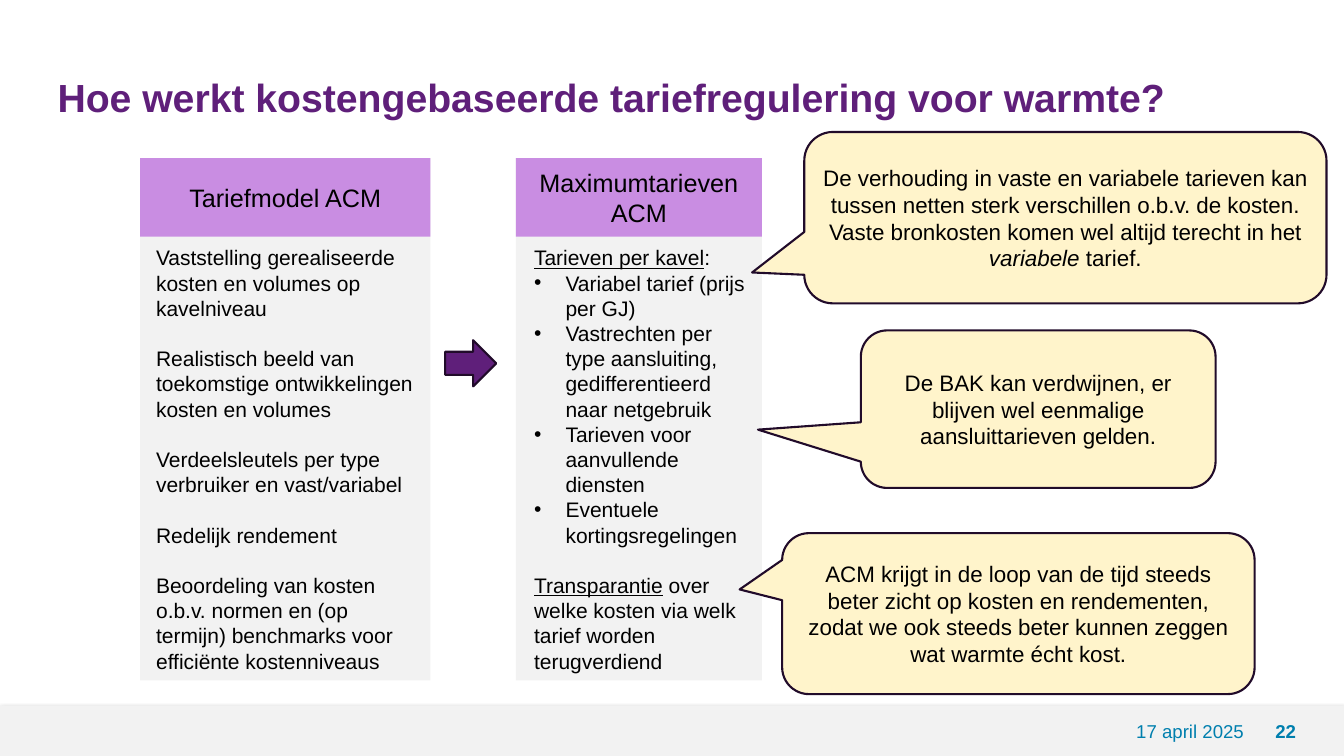
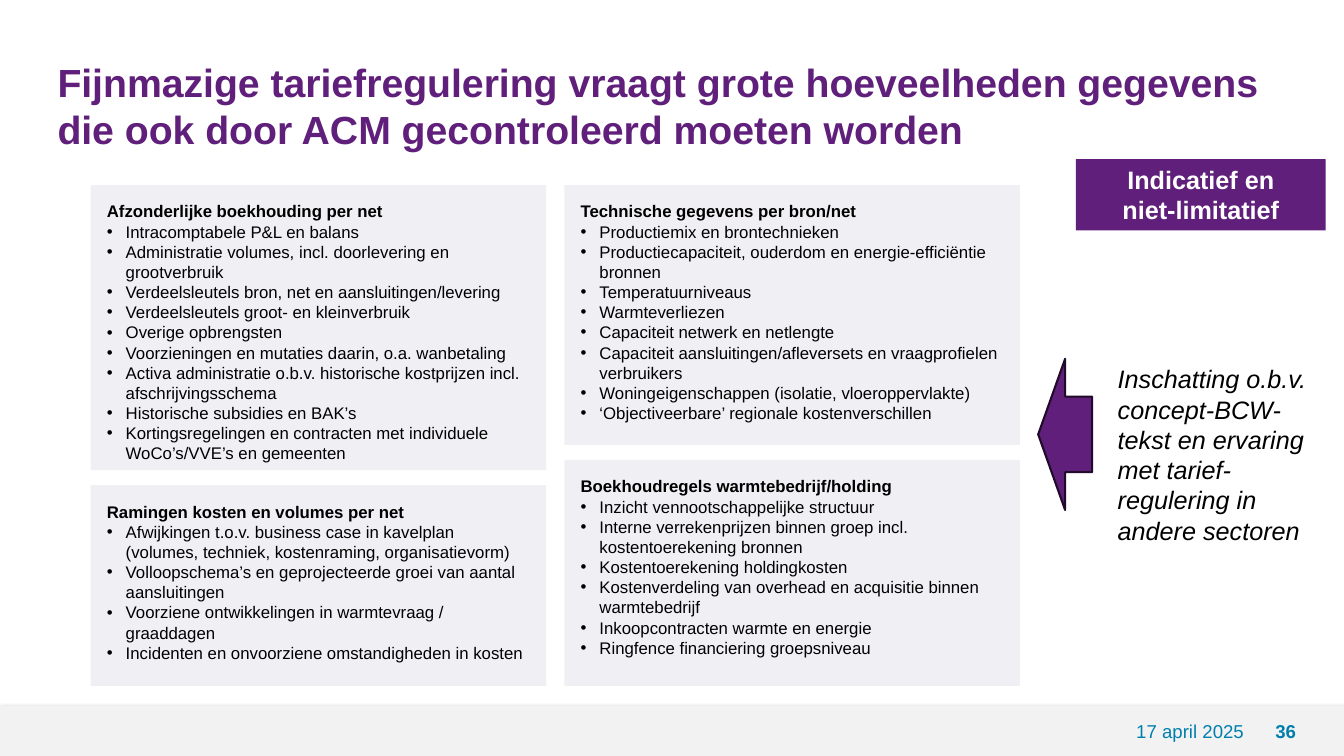
"""Build two slides on cost-based tariff regulation for heat."""
import dataclasses

import pptx
import pptx.dml.color
import pptx.enum.shapes
import pptx.enum.text
import pptx.oxml
import pptx.oxml.ns
import pptx.util

Pt = pptx.util.Pt
SHAPE = pptx.enum.shapes.MSO_SHAPE
ALIGN = pptx.enum.text.PP_ALIGN
ANCHOR = pptx.enum.text.MSO_ANCHOR


@dataclasses.dataclass(frozen=True)
class Theme:
    font: str = "Arial"
    purple: str = "5F1F7A"
    lilac: str = "C98DE2"
    cream: str = "FFF4CB"
    outline: str = "210B2A"
    grey: str = "F2F2F2"
    card: str = "F0EFF4"
    blue: str = "007FAE"
    black: str = "000000"
    white: str = "FFFFFF"
    title: float = 28
    head: float = 18
    callout: float = 16
    body: float = 15
    footer: float = 13.3
    small: float = 12
    line: float = 1.5


T = Theme()
WIDTH, HEIGHT = 960, 540
BAND_TOP = 504
DATE = "17 april 2025"
BULLET = "• "

TARIFF = {
    "title": "Hoe werkt kostengebaseerde tariefregulering voor warmte?",
    "title_top": 28,
    "number": "22",
}
TARIFF_COLUMNS = [
    {
        "head": "Tariefmodel ACM",
        "left": 100, "width": 207.4, "text_left": 104.4, "text_width": 203,
        "body": [
            "Vaststelling gerealiseerde kosten en volumes op kavelniveau",
            "Realistisch beeld van toekomstige ontwikkelingen kosten en volumes",
            "Verdeelsleutels per type verbruiker en vast/variabel",
            "Redelijk rendement",
            "Beoordeling van kosten o.b.v. normen en (op termijn) benchmarks voor "
            "efficiënte kostenniveaus",
        ],
    },
    {
        "head": "Maximumtarieven ACM",
        "left": 368.5, "width": 175.7, "text_left": 374.4, "text_width": 165.6,
        "body": [
            [("Tarieven per kavel", "underline"), (":", None)],
            "• Variabel tarief (prijs per GJ)",
            "• Vastrechten per type aansluiting, gedifferentieerd naar netgebruik",
            "• Tarieven voor aanvullende diensten",
            "• Eventuele kortingsregelingen",
            [("Transparantie", "underline"),
             (" over welke kosten via welk tarief worden terugverdiend", None)],
        ],
    },
]
CALLOUTS = [
    ((574.5, 94.3, 373, 122.4), (-0.6, 0.32), [
        ("De verhouding in vaste en variabele tarieven kan tussen netten sterk "
         "verschillen o.b.v. de kosten. Vaste bronkosten komen wel altijd "
         "terecht in het ", None),
        ("variabele", "italic"), (" tarief.", None)]),
    ((614.9, 236, 253.4, 112.5), (-0.79, 0.13),
     "De BAK kan verdwijnen, er blijven wel eenmalige aansluittarieven gelden."),
    ((558.7, 380.8, 337.5, 115), (-0.59, -0.15),
     "ACM krijgt in de loop van de tijd steeds beter zicht op kosten en "
     "rendementen, zodat we ook steeds beter kunnen zeggen wat warmte écht kost."),
]

DATA = {
    "title": "Fijnmazige tariefregulering vraagt grote hoeveelheden gegevens "
             "die ook door ACM gecontroleerd moeten worden",
    "title_top": 34,
    "number": "36",
}
CARD_COLUMNS = [
    (203.6, [
        ("Afzonderlijke boekhouding per net", [
            "Intracomptabele P&L en balans",
            "Administratie volumes, incl. doorlevering en grootverbruik",
            "Verdeelsleutels bron, net en aansluitingen/levering",
            "Verdeelsleutels groot- en kleinverbruik",
            "Overige opbrengsten",
            "Voorzieningen en mutaties daarin, o.a. wanbetaling",
            "Activa administratie o.b.v. historische kostprijzen incl. "
            "afschrijvingsschema",
            "Historische subsidies en BAK’s",
            "Kortingsregelingen en contracten met individuele WoCo’s/VVE’s en "
            "gemeenten",
        ]),
        ("Ramingen kosten en volumes per net", [
            "Afwijkingen t.o.v. business case in kavelplan (volumes, techniek, "
            "kostenraming, organisatievorm)",
            "Volloopschema’s en geprojecteerde groei van aantal aansluitingen",
            "Voorziene ontwikkelingen in warmtevraag / graaddagen",
            "Incidenten en onvoorziene omstandigheden in kosten",
        ]),
    ]),
    (185.6, [
        ("Technische gegevens per bron/net", [
            "Productiemix en brontechnieken",
            "Productiecapaciteit, ouderdom en energie-efficiëntie bronnen",
            "Temperatuurniveaus",
            "Warmteverliezen",
            "Capaciteit netwerk en netlengte",
            "Capaciteit aansluitingen/afleversets en vraagprofielen verbruikers",
            "Woningeigenschappen (isolatie, vloeroppervlakte)",
            "‘Objectiveerbare’ regionale kostenverschillen",
        ]),
        ("Boekhoudregels warmtebedrijf/holding", [
            "Inzicht vennootschappelijke structuur",
            "Interne verrekenprijzen binnen groep incl. kostentoerekening bronnen",
            "Kostentoerekening holdingkosten",
            "Kostenverdeling van overhead en acquisitie binnen warmtebedrijf",
            "Inkoopcontracten warmte en energie",
            "Ringfence financiering groepsniveau",
        ]),
    ]),
]
LABEL = "Indicatief en\vniet-limitatief"
REMARK = ("Inschatting o.b.v. concept-BCW-tekst en ervaring met "
          "tarief-regulering in andere sectoren")


def rgb(color):
    return pptx.dml.color.RGBColor.from_string(color)


def set_bullet(p, indent):
    pPr = p._p.get_or_add_pPr()
    pPr.set("marL", str(Pt(indent)))
    pPr.set("indent", str(-Pt(indent)))
    pPr.append(pptx.oxml.parse_xml(
        f'<a:buFont {pptx.oxml.ns.nsdecls("a")} typeface="{T.font}"/>'))
    pPr.append(pptx.oxml.parse_xml(
        f'<a:buChar {pptx.oxml.ns.nsdecls("a")} char="{BULLET.strip()}"/>'))


def write(sp, paragraphs, size, color=T.black, align=ALIGN.LEFT, anchor=ANCHOR.TOP,
          bold=False, italic=False, inset=None, indent=0, gap=0):
    tf = sp.text_frame
    tf.word_wrap = True
    tf.vertical_anchor = anchor
    if inset is not None:
        tf.margin_left = tf.margin_right = tf.margin_top = tf.margin_bottom = Pt(inset)
    for i, content in enumerate(paragraphs):
        p = tf.add_paragraph() if i else tf.paragraphs[0]
        p.alignment = align
        styles = []
        if isinstance(content, str):
            p.text = content.removeprefix(BULLET)
        else:
            for text, style in content:
                p.add_run().text = text
                styles.append(style)
        if isinstance(content, str) and content.startswith(BULLET):
            set_bullet(p, indent)
        elif i and gap:
            p.space_before = Pt(gap)
        for r in p.runs:
            r.font.name = T.font
            r.font.size = Pt(size)
            r.font.color.rgb = rgb(color)
            r.font.bold = bold
            r.font.italic = italic
        for r, style in zip(p.runs, styles):
            if style:
                setattr(r.font, style, True)


def add_text(s, box, paragraphs, size, **style):
    sp = s.shapes.add_textbox(*map(Pt, box))
    write(sp, paragraphs, size, **style)
    return sp


def add_shape(s, kind, box, fill, line=None):
    sp = s.shapes.add_shape(kind, *map(Pt, box))
    sp.shadow.inherit = False
    sp.fill.solid()
    sp.fill.fore_color.rgb = rgb(fill)
    if line:
        sp.line.color.rgb = rgb(line)
        sp.line.width = Pt(T.line)
    else:
        sp.line.fill.background()
    return sp


def new_slide(prs, page):
    s = prs.slides.add_slide(prs.slide_layouts[6])
    height = HEIGHT - BAND_TOP
    band = add_shape(s, SHAPE.RECTANGLE, (0, BAND_TOP, WIDTH, height), T.grey)
    effects = band._element.spPr.find(pptx.oxml.ns.qn("a:effectLst"))
    effects.append(pptx.oxml.parse_xml(
        f'<a:outerShdw {pptx.oxml.ns.nsdecls("a")} blurRad="{Pt(4)}" dist="{Pt(2)}" '
        f'dir="5400000" rotWithShape="0"><a:srgbClr val="{T.black}">'
        '<a:alpha val="46000"/></a:srgbClr></a:outerShdw>'))
    add_text(s, (664, BAND_TOP, 231.7, height), [DATE], T.footer, color=T.blue,
             align=ALIGN.RIGHT, anchor=ANCHOR.MIDDLE)
    add_text(s, (895.7, BAND_TOP, 45.4, height), [page["number"]], T.footer,
             color=T.blue, align=ALIGN.CENTER, anchor=ANCHOR.MIDDLE, bold=True)
    add_text(s, (34, page["title_top"], 896, 82.8), [page["title"]], T.title,
             color=T.purple, anchor=ANCHOR.MIDDLE, bold=True)
    return s


def build_tariff_slide(prs):
    s = new_slide(prs, TARIFF)
    top, height, head_height = 113, 373, 56
    for col in TARIFF_COLUMNS:
        left, width = col["left"], col["width"]
        add_shape(s, SHAPE.RECTANGLE, (left, top, width, height), T.grey)
        head = add_shape(s, SHAPE.RECTANGLE, (left, top, width, head_height), T.lilac)
        write(head, [col["head"]], T.head, align=ALIGN.CENTER, anchor=ANCHOR.MIDDLE)
        add_text(s, (col["text_left"], 171.4, col["text_width"], 316), col["body"],
                 T.body, indent=22.5, gap=18)
    add_shape(s, SHAPE.RIGHT_ARROW, (318, 243, 36.5, 33), T.purple, T.outline)
    for box, tip, text in CALLOUTS:
        sp = add_shape(s, SHAPE.ROUNDED_RECTANGULAR_CALLOUT, box, T.cream, T.outline)
        sp.adjustments[0], sp.adjustments[1] = tip
        write(sp, [text], T.callout, align=ALIGN.CENTER, anchor=ANCHOR.MIDDLE)


def build_data_slide(prs):
    s = new_slide(prs, DATA)
    left, top, bottom, width, gap_x, gap_y = 64.8, 132.2, 490, 325.4, 13, 10.8
    for c, (first_height, cards) in enumerate(CARD_COLUMNS):
        x = left + c * (width + gap_x)
        second_top = top + first_height + gap_y
        spans = [(top, first_height), (second_top, bottom - second_top)]
        for (y, height), (head, items) in zip(spans, cards):
            sp = add_shape(s, SHAPE.RECTANGLE, (x, y, width, height), T.card)
            write(sp, [[(head, "bold")]] + [BULLET + item for item in items],
                  T.small, inset=11.5, indent=13.5)
    add_shape(s, SHAPE.LEFT_ARROW, (741.6, 256.3, 38.5, 108), T.purple, T.outline)
    add_text(s, (791.3, 256.3, 155.5, 138), [REMARK], T.head, italic=True)
    label = add_shape(s, SHAPE.RECTANGLE, (768.5, 113.6, 178.5, 51), T.purple)
    write(label, [LABEL], T.head, color=T.white, align=ALIGN.CENTER, bold=True)


def main():
    prs = pptx.Presentation()
    prs.slide_width, prs.slide_height = Pt(WIDTH), Pt(HEIGHT)
    build_tariff_slide(prs)
    build_data_slide(prs)
    prs.save("out.pptx")


if __name__ == "__main__":
    main()
